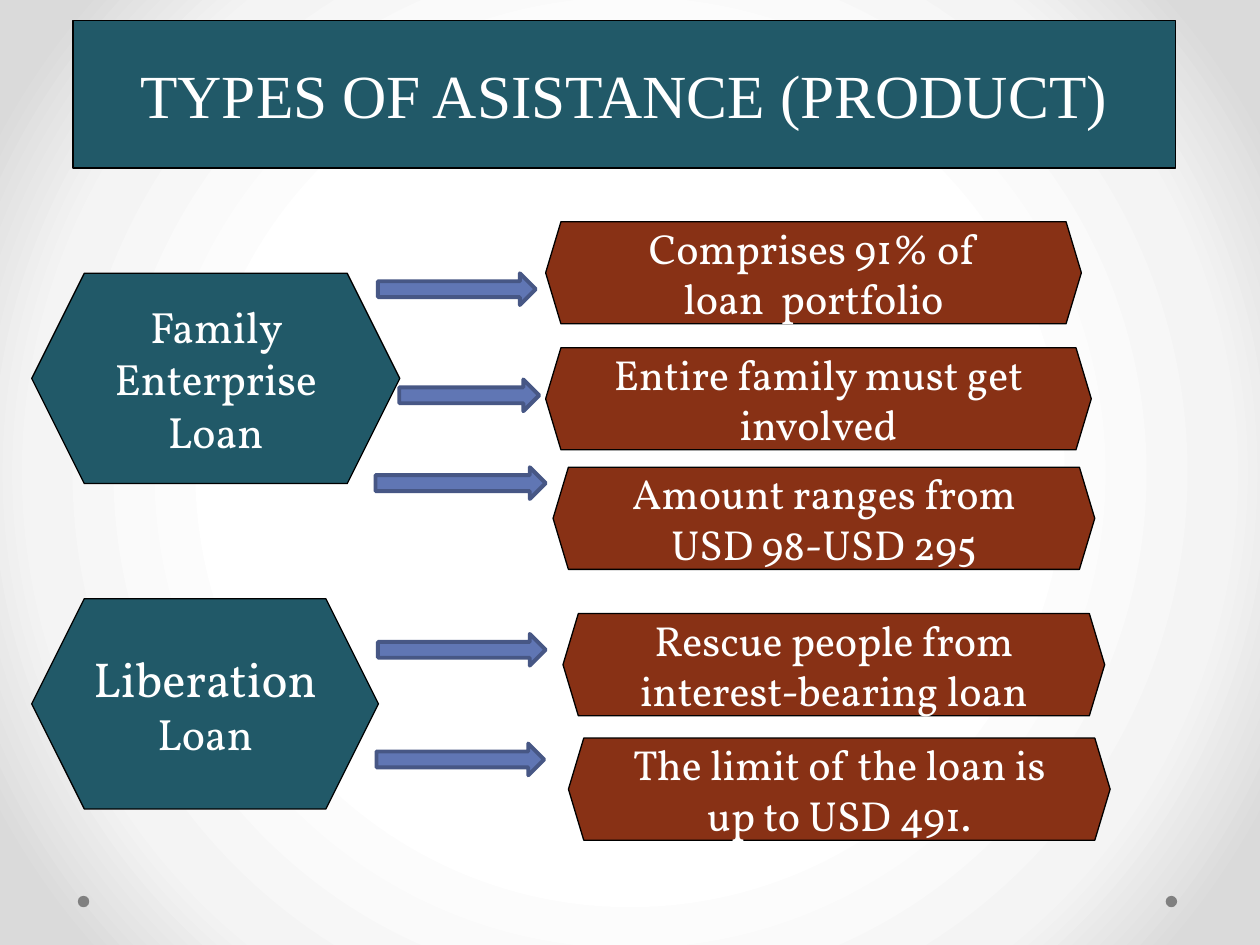
from lxml import etree
from pptx import Presentation
from pptx.dml.color import RGBColor
from pptx.enum.shapes import MSO_SHAPE
from pptx.enum.text import MSO_ANCHOR, PP_ALIGN
from pptx.oxml.ns import qn
from pptx.util import Cm, Pt

RECTANGLE, HEXAGON = MSO_SHAPE.RECTANGLE, MSO_SHAPE.HEXAGON
ARROW, OVAL = MSO_SHAPE.RIGHT_ARROW, MSO_SHAPE.OVAL
MIDDLE, CENTER = MSO_ANCHOR.MIDDLE, PP_ALIGN.CENTER

TEAL, RUST, BLUE, NAVY = "215968", "883115", "6076B4", "475785"
BLACK, WHITE, GRAY = "000000", "FFFFFF", "808080"
SERIF, BODY = "Times New Roman", "Vollkorn"


def color(value):
    return RGBColor.from_string(value)


def write(box, *parts, font=BODY):
    """Write centred white text; each part is a (text, size) pair."""
    frame = box.text_frame
    frame.word_wrap = True
    frame.vertical_anchor = MIDDLE
    para = frame.paragraphs[0]
    para.alignment = CENTER
    for text, size in parts:
        span = para.add_run()
        span.text = text
        span.font.name = font
        span.font.size = Pt(size)
        span.font.color.rgb = color(WHITE)


class Painter:
    def __init__(self, page):
        self.page = page

    def background(self, stops):
        """Fill the page with a gradient spreading from its centre."""
        self.page.background.fill.gradient()
        gradient = self.page.element.find(".//" + qn("a:gradFill"))
        for child in list(gradient):
            gradient.remove(child)
        stop_list = etree.SubElement(gradient, qn("a:gsLst"))
        for percent, value in stops:
            stop = etree.SubElement(stop_list, qn("a:gs"), pos=str(percent * 1000))
            etree.SubElement(stop, qn("a:srgbClr"), val=value)
        circle = etree.SubElement(gradient, qn("a:path"), path="circle")
        etree.SubElement(circle, qn("a:fillToRect"),
                         {side: "50000" for side in "ltrb"})

    def shape(self, kind, left, top, width, height, fill, line=None, weight=0.75):
        box = self.page.shapes.add_shape(
            kind, Cm(left), Cm(top), Cm(width), Cm(height))
        box.shadow.inherit = False
        box.fill.solid()
        box.fill.fore_color.rgb = color(fill)
        if line:
            box.line.color.rgb = color(line)
            box.line.width = Pt(weight)
        else:
            box.line.fill.background()
        return box

    def dot(self, left):
        self.shape(OVAL, left, 18.06, 0.23, 0.23, GRAY)

    def title(self, text):
        box = self.shape(RECTANGLE, 1.47, 0.42, 22.23, 2.97, TEAL, BLACK)
        write(box, (text, 35), font=SERIF)

    def loan(self, top, width, *parts):
        box = self.shape(HEXAGON, 0.64, top, width, 4.24, TEAL, BLACK)
        write(box, *parts)

    def detail(self, left, top, width, text):
        box = self.shape(HEXAGON, left, top, width, 2.06, RUST, BLACK)
        box.adjustments[0] = 0.15
        write(box, (text, 24))

    def arrow(self, left, top, width):
        self.shape(ARROW, left, top, width, 0.64, BLUE, NAVY, weight=2.25)


def main():
    deck = Presentation()
    deck.slide_width, deck.slide_height = Cm(25.4), Cm(19.05)
    painter = Painter(deck.slides.add_slide(deck.slide_layouts[6]))

    # Backdrop and heading
    painter.background([(50, WHITE), (76, "F4F4F4"), (92, "DADADA")])
    for left in (23.5, 1.57):
        painter.dot(left)
    painter.title("TYPES OF ASISTANCE (PRODUCT)")

    # Loan types
    painter.loan(5.51, 7.42, ("Family Enterprise Loan", 25))
    painter.loan(12.07, 6.99, ("Liberation ", 28), ("Loan", 25))

    # Features of each loan: left, top, width, text
    for feature in (
        (11, 4.47, 10.8, "Comprises 91% of loan  portfolio"),
        (11, 7.01, 11, "Entire family must get involved"),
        (11.15, 9.42, 10.92, "Amount ranges from USD 98-USD 295"),
        (11.35, 12.37, 10.92, "Rescue people from interest-bearing loan"),
        (11.46, 14.88, 10.92, "The limit of the loan is up to USD 491."),
    ):
        painter.detail(*feature)

    # Arrows from loan to feature: left, top, width
    for place in ((7.62, 5.51, 3.18), (8.05, 7.65, 2.82), (7.57, 9.42, 3.43),
                  (7.62, 12.78, 3.38), (7.59, 14.99, 3.38)):
        painter.arrow(*place)

    deck.save("out.pptx")


if __name__ == "__main__":
    main()
